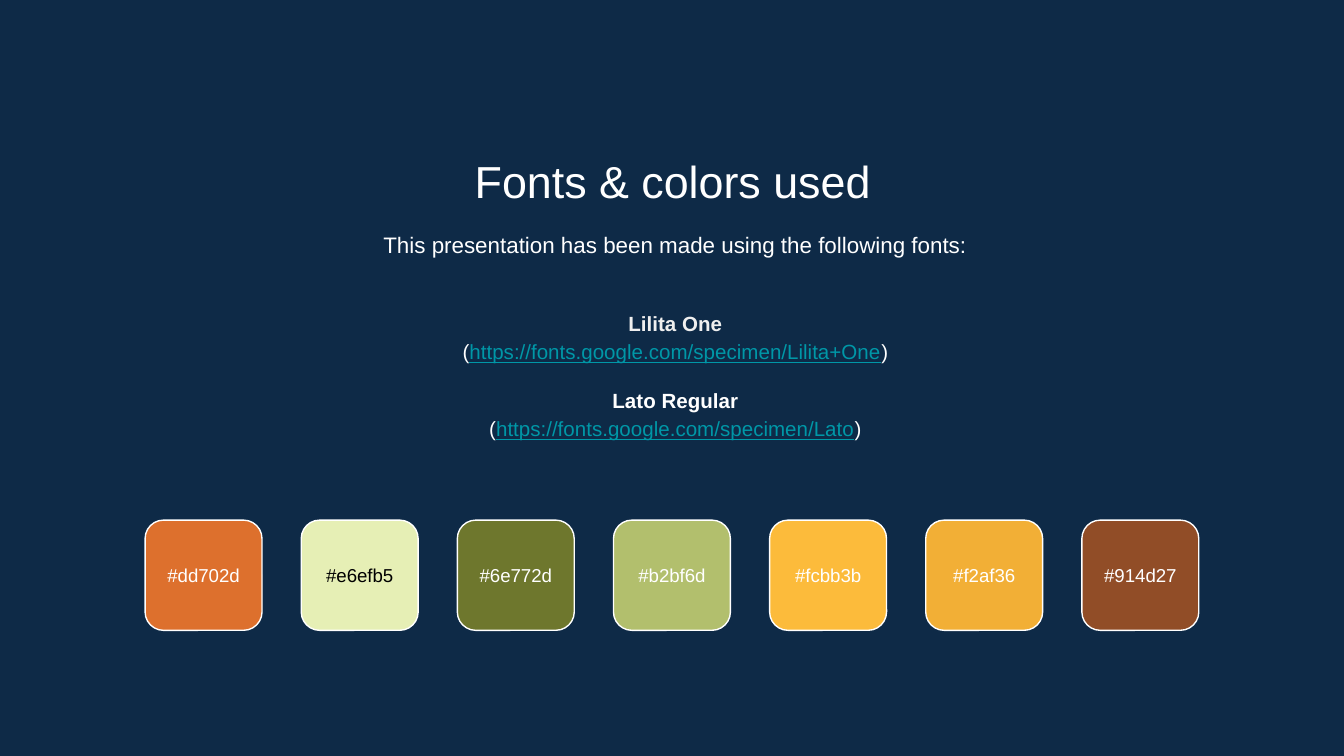
from pptx import Presentation
from pptx.dml.color import RGBColor
from pptx.enum.shapes import MSO_SHAPE
from pptx.enum.text import MSO_ANCHOR, PP_ALIGN
from pptx.util import Inches, Pt

ROUNDED = MSO_SHAPE.ROUNDED_RECTANGLE
CENTER = PP_ALIGN.CENTER
TOP = MSO_ANCHOR.TOP
MIDDLE = MSO_ANCHOR.MIDDLE

NAVY = RGBColor(0x0E, 0x2A, 0x47)
WHITE = RGBColor(0xFF, 0xFF, 0xFF)
PALE_GRAY = RGBColor(0xEF, 0xEF, 0xEF)
BLACK = RGBColor(0x00, 0x00, 0x00)
LINK_TEAL = RGBColor(0x00, 0x97, 0xA7)

FONT = "Arial"
LINE_SPACING = 1.15
FONTS_USED = [
    ("Lilita One", PALE_GRAY, "https://fonts.google.com/specimen/Lilita+One"),
    ("Lato Regular", WHITE, "https://fonts.google.com/specimen/Lato"),
]
SWATCHES = [
    ("dd702d", WHITE), ("e6efb5", BLACK), ("6e772d", WHITE), ("b2bf6d", WHITE),
    ("fcbb3b", WHITE), ("f2af36", WHITE), ("914d27", WHITE),
]


def set_frame(frame, anchor, margin):
    frame.word_wrap = True
    frame.vertical_anchor = anchor
    frame.margin_left = frame.margin_right = Inches(margin)
    frame.margin_top = frame.margin_bottom = Inches(margin)


def style_font(font, size, color, bold=False):
    font.name = FONT
    font.size = Pt(size)
    font.bold = bold
    font.color.rgb = color


def add_span(para, text, size, color, bold=False):
    span = para.add_run()
    span.text = text
    style_font(span.font, size, color, bold)
    return span


def center_para(para):
    para.alignment = CENTER
    para.line_spacing = LINE_SPACING


def place_title(page, left, top, width, height):
    title = page.shapes.title
    title.left, title.top = Inches(left), Inches(top)
    title.width, title.height = Inches(width), Inches(height)
    set_frame(title.text_frame, TOP, 0.1)
    title.text_frame.text = "Fonts & colors used"
    para = title.text_frame.paragraphs[0]
    para.alignment = CENTER
    style_font(para.runs[0].font, 24, WHITE)


def add_text_frame(page, left, top, width, height, anchor):
    box = page.shapes.add_textbox(Inches(left), Inches(top), Inches(width), Inches(height))
    set_frame(box.text_frame, anchor, 0.1)
    return box.text_frame


def add_intro(page, left, top, width, height):
    para = add_text_frame(page, left, top, width, height, TOP).paragraphs[0]
    center_para(para)
    add_span(para, "This presentation has been made using the following fonts:", 12, WHITE)


def add_font_list(page, left, top, width, height):
    """Each font is a bold name above its address in brackets."""
    frame = add_text_frame(page, left, top, width, height, MIDDLE)
    for index, (name, color, address) in enumerate(FONTS_USED):
        heading = frame.add_paragraph() if index else frame.paragraphs[0]
        center_para(heading)
        if index:
            heading.space_before = Pt(11)
        add_span(heading, name, 11, color, bold=True)

        source = frame.add_paragraph()
        center_para(source)
        add_span(source, "(", 11, WHITE)
        add_span(source, address, 11, LINK_TEAL).font.underline = True
        add_span(source, ")", 11, WHITE)


def add_swatches(page, left, top, width, height):
    """Spread equal colour tiles over the width of the box."""
    tile_width = 0.87
    pitch = (width - tile_width) / (len(SWATCHES) - 1)
    for index, (code, text_color) in enumerate(SWATCHES):
        tile = page.shapes.add_shape(
            ROUNDED, Inches(left + index * pitch), Inches(top),
            Inches(tile_width), Inches(height))
        tile.shadow.inherit = False
        tile.fill.solid()
        tile.fill.fore_color.rgb = RGBColor.from_string(code.upper())
        tile.line.color.rgb = WHITE
        tile.line.width = Pt(0.75)
        set_frame(tile.text_frame, MIDDLE, 0)
        para = tile.text_frame.paragraphs[0]
        para.alignment = CENTER
        add_span(para, f"#{code}", 10, text_color)


def main():
    deck = Presentation()
    deck.slide_width = Inches(10)
    deck.slide_height = deck.slide_width * 9 // 16
    page = deck.slides.add_slide(deck.slide_layouts[5])
    page.background.fill.solid()
    page.background.fill.fore_color.rgb = NAVY

    place_title(page, 1.15, 1.04, 7.71, 0.53)
    add_intro(page, 1.17, 1.59, 7.71, 0.48)
    add_font_list(page, 1.17, 2.1, 7.71, 1.37)
    add_swatches(page, 1.08, 3.87, 7.84, 0.82)
    deck.save("out.pptx")


if __name__ == "__main__":
    main()
